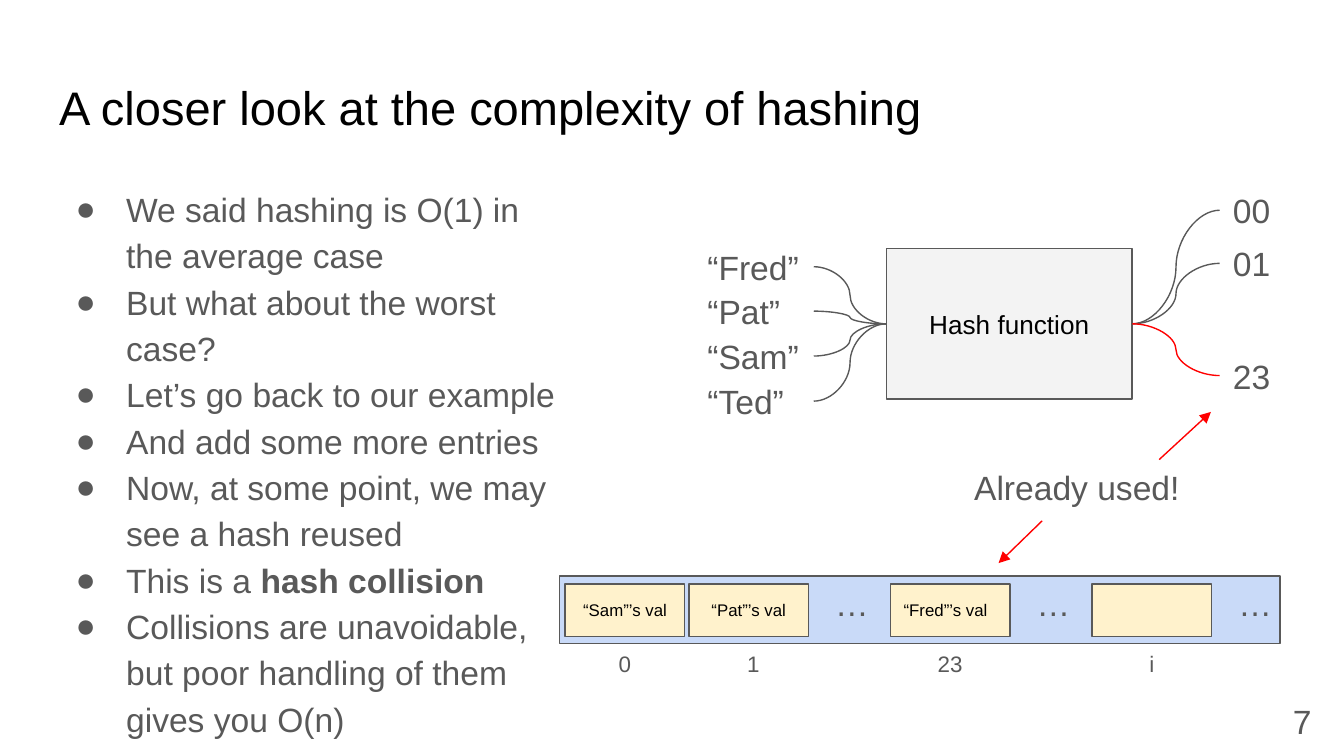
from dataclasses import dataclass
from typing import Any

from lxml.etree import SubElement
from pptx import Presentation
from pptx.dml.color import RGBColor
from pptx.enum.shapes import MSO_CONNECTOR as Link, MSO_SHAPE as Form
from pptx.enum.text import MSO_ANCHOR as Anchor, MSO_AUTO_SIZE as Fit, PP_ALIGN as Align
from pptx.oxml.ns import qn
from pptx.util import Emu, Pt

PX = 4572


@dataclass(frozen=True)
class Theme:
    font: str = "Arial"
    ink: str = "000000"
    gray: str = "595959"
    red: str = "FF0000"
    pale: str = "F3F3F3"
    blue: str = "C9DAF8"
    cream: str = "FFF2CC"
    head: float = 25.2
    body: float = 18
    mid: float = 14
    note: float = 12
    tiny: float = 9
    line: float = 0.75


@dataclass(frozen=True)
class Box:
    x: int
    y: int
    w: int
    h: int


@dataclass(frozen=True)
class Slot:
    x: int
    text: str
    mark: str
    mark_x: int
    align: Any = Align.CENTER


@dataclass(frozen=True)
class Code:
    text: str
    y: int
    color: str


THEME = Theme()


def px(*sizes: int) -> list[Emu]:
    return [Emu(size * PX) for size in sizes]


def place(box: Box) -> list[Emu]:
    return px(box.x, box.y, box.w, box.h)


def setup(frame: Any, anchor: Any = Anchor.TOP) -> None:
    style = {"word_wrap": True, "auto_size": Fit.NONE, "vertical_anchor": anchor}
    style |= {f"margin_{side}": Emu(20 * PX) for side in ("left", "top", "right", "bottom")}
    for name, value in style.items():
        setattr(frame, name, value)


def format_font(font: Any, size: float, color: str, bold: bool = False) -> None:
    for name, value in {"name": THEME.font, "size": Pt(size), "bold": bold}.items():
        setattr(font, name, value)
    font.color.rgb = RGBColor.from_string(color)


def write(frame: Any, text: str, size: float, color: str, align: Any = Align.LEFT) -> None:
    para = frame.paragraphs[0]
    para.alignment = align
    run = para.add_run()
    run.text = text
    format_font(run.font, size, color)


def add_label(shapes: Any, box: Box, text: str, size: float = THEME.body,
              align: Any = Align.LEFT) -> None:
    frame = shapes.add_textbox(*place(box)).text_frame
    setup(frame)
    write(frame, text, size, THEME.gray, align)


def add_rect(shapes: Any, box: Box, fill: str, text: str = "", size: float = THEME.tiny,
             align: Any = Align.CENTER) -> None:
    rect = shapes.add_shape(Form.RECTANGLE, *place(box))
    rect.shadow.inherit = False
    rect.fill.solid()
    rect.fill.fore_color.rgb = RGBColor.from_string(fill)
    rect.line.color.rgb = RGBColor.from_string(THEME.gray)
    rect.line.width = Pt(THEME.line)
    if text:
        setup(rect.text_frame, Anchor.MIDDLE)
        write(rect.text_frame, text, size, THEME.ink, align)


def add_link(shapes: Any, kind: Any, start: tuple[int, int], end: tuple[int, int],
             color: str) -> Any:
    link = shapes.add_connector(kind, *px(*start, *end))
    link.line.color.rgb = RGBColor.from_string(color)
    link.line.width = Pt(THEME.line)
    SubElement(link._element.spPr, qn("a:effectLst"))
    return link


def add_arrow(shapes: Any, start: tuple[int, int], end: tuple[int, int]) -> None:
    link = add_link(shapes, Link.STRAIGHT, start, end, THEME.red)
    SubElement(link.line._get_or_add_ln(), qn("a:tailEnd"), type="triangle")


def add_list(shapes: Any, box: Box, items: list[list[tuple[str, bool]]]) -> None:
    frame = shapes.add_textbox(*place(box)).text_frame
    setup(frame)
    for i, item in enumerate(items):
        para = frame.add_paragraph() if i else frame.paragraphs[0]
        para.line_spacing = 1.15
        props = para._p.get_or_add_pPr()
        props.set("marL", str(100 * PX))
        props.set("indent", str(-75 * PX))
        tint = SubElement(props, qn("a:buClr"))
        SubElement(tint, qn("a:srgbClr"), val=THEME.gray)
        SubElement(props, qn("a:buFont"), typeface=THEME.font)
        SubElement(props, qn("a:buChar"), char="●")
        for text, bold in item:
            run = para.add_run()
            run.text = text
            format_font(run.font, THEME.body, THEME.gray, bold)


def add_title(title: Any, box: Box, text: str) -> None:
    for name, value in zip(("left", "top", "width", "height"), place(box)):
        setattr(title, name, value)
    setup(title.text_frame)
    write(title.text_frame, text, THEME.head, THEME.ink)


POINTS = [
    [("We said hashing is O(1) in the average case", False)],
    [("But what about the worst case?", False)],
    [("Let’s go back to our example", False)],
    [("And add some more entries", False)],
    [("Now, at some point, we may see a hash reused", False)],
    [("This is a ", False), ("hash collision", True)],
    [("Collisions are unavoidable, but poor handling of them gives you O(n)", False)],
]
KEYS = ["“Fred”", "“Pat”", "“Sam”", "“Ted”"]
CODES = [Code("00", 263, THEME.gray), Code("01", 342, THEME.gray), Code("23", 509, THEME.red)]
SLOTS = [
    Slot(841, "“Sam”’s val", "0", 889),
    Slot(1025, "“Pat”’s val", "1", 1080),
    Slot(1325, "“Fred”’s val", "23", 1373, Align.LEFT),
    Slot(1625, "", "i", 1673),
]


def add_hash(shapes: Any) -> None:
    hub = Box(1319, 370, 366, 224)
    mid = hub.y + hub.h // 2
    add_rect(shapes, hub, THEME.pale, "Hash function", THEME.mid)
    for i, key in enumerate(KEYS):
        y = 347 + i * 200 // 3
        add_label(shapes, Box(1033, y, 178, 100), key)
        add_link(shapes, Link.CURVE, (1211, y + 50), (hub.x, mid), THEME.gray)
    for code in CODES:
        add_label(shapes, Box(1815, code.y, 200, 100), code.text)
        add_link(shapes, Link.CURVE, (hub.x + hub.w, mid), (1815, code.y + 50), code.color)


def add_store(shapes: Any) -> None:
    add_rect(shapes, Box(833, 857, 1072, 101), THEME.blue)
    for slot in SLOTS:
        add_rect(shapes, Box(slot.x, 869, 178, 78), THEME.cream, slot.text, align=slot.align)
        add_label(shapes, Box(slot.mark_x, 948, 82, 80), slot.mark, THEME.note, Align.CENTER)
    for x in range(1223, 1824, 300):
        add_label(shapes, Box(x, 847, 82, 100), "…")


def main() -> None:
    deck = Presentation()
    deck.slide_width, deck.slide_height = px(2000, 1125)
    slide = deck.slides.add_slide(deck.slide_layouts[5])
    shapes = slide.shapes
    add_title(shapes.title, Box(68, 97, 1864, 126), "A closer look at the complexity of hashing")
    add_list(shapes, Box(68, 252, 802, 872), POINTS)
    add_hash(shapes)
    add_store(shapes)
    add_label(shapes, Box(1430, 675, 366, 100), "Already used!")
    add_arrow(shapes, (1551, 775), (1486, 838))
    add_arrow(shapes, (1725, 684), (1802, 613))
    add_label(shapes, Box(1884, 1023, 108, 100), "7", align=Align.CENTER)
    deck.save("out.pptx")


if __name__ == "__main__":
    main()
